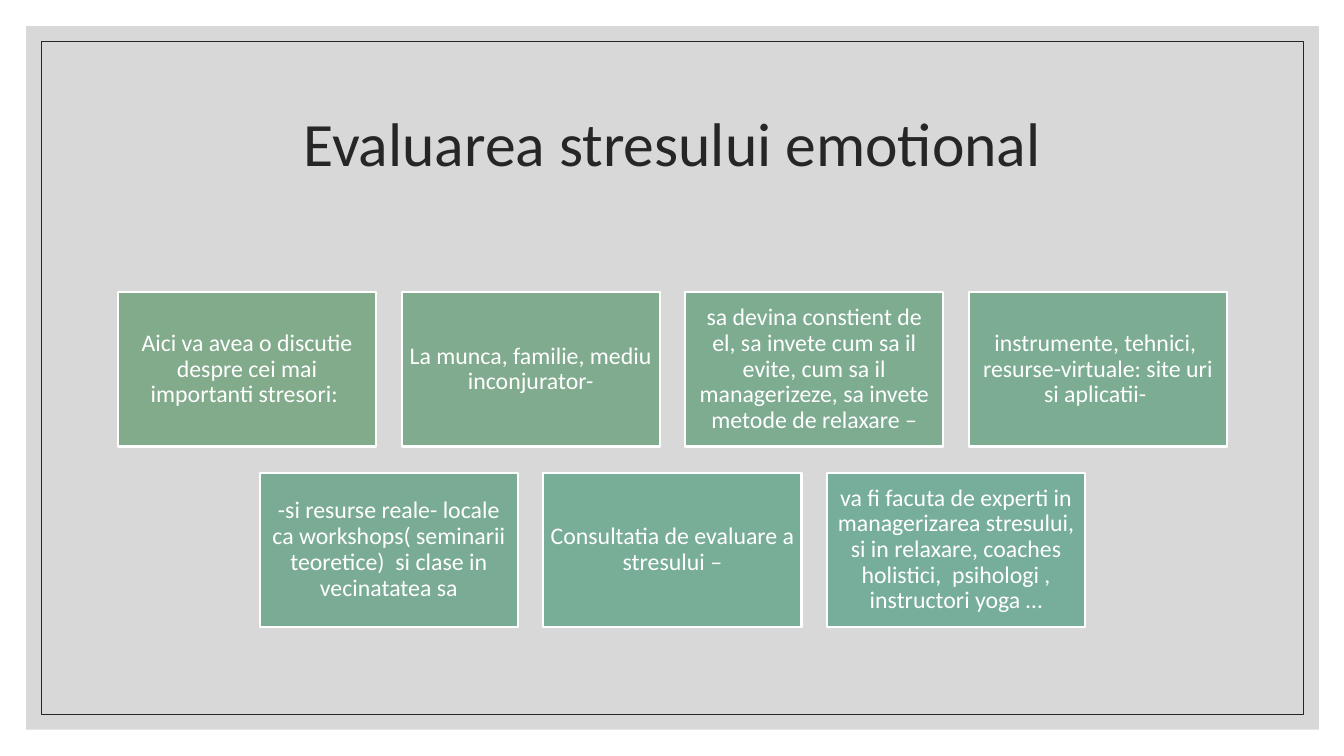
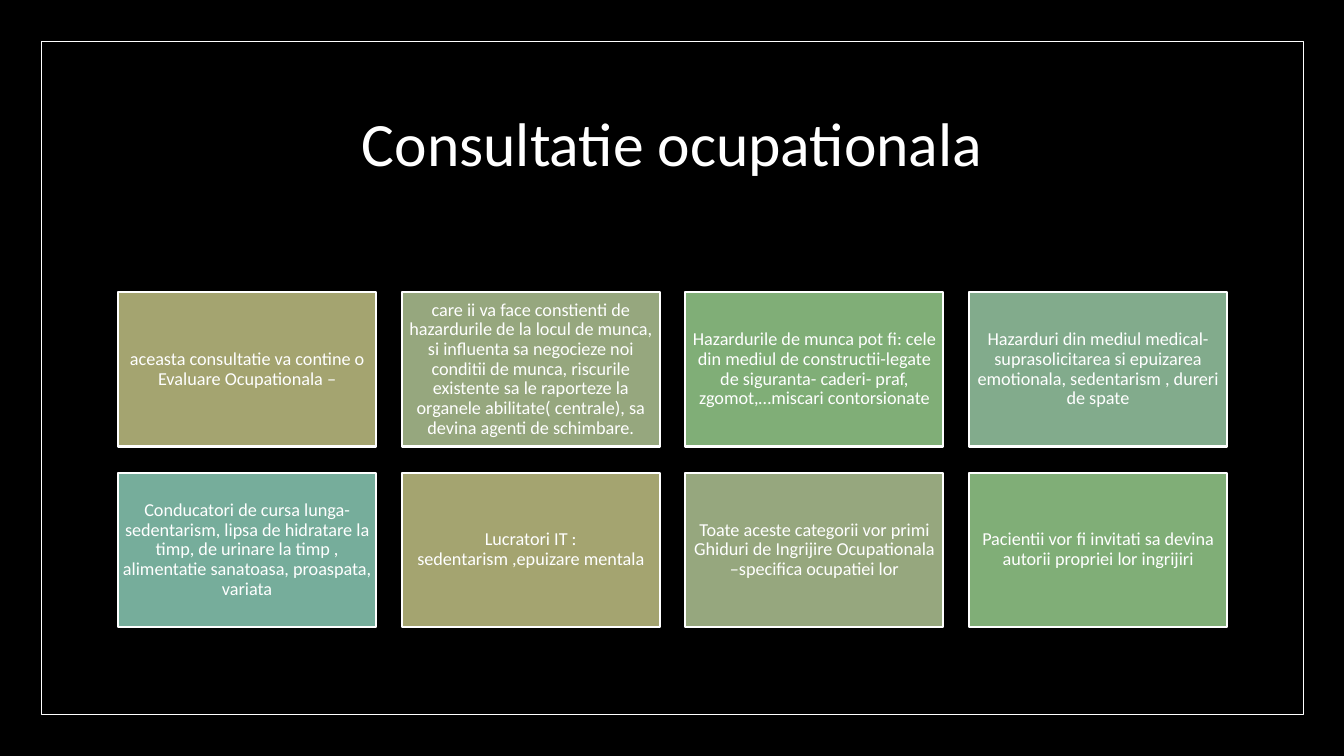
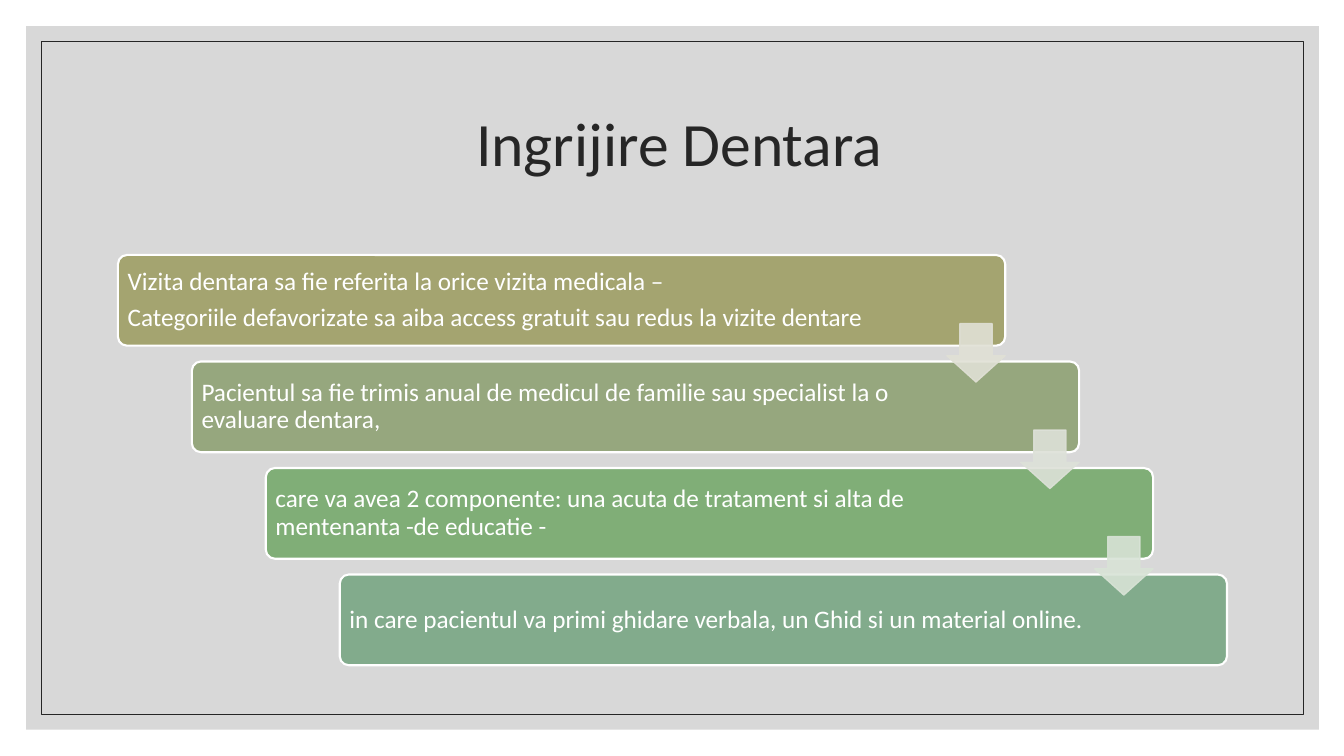
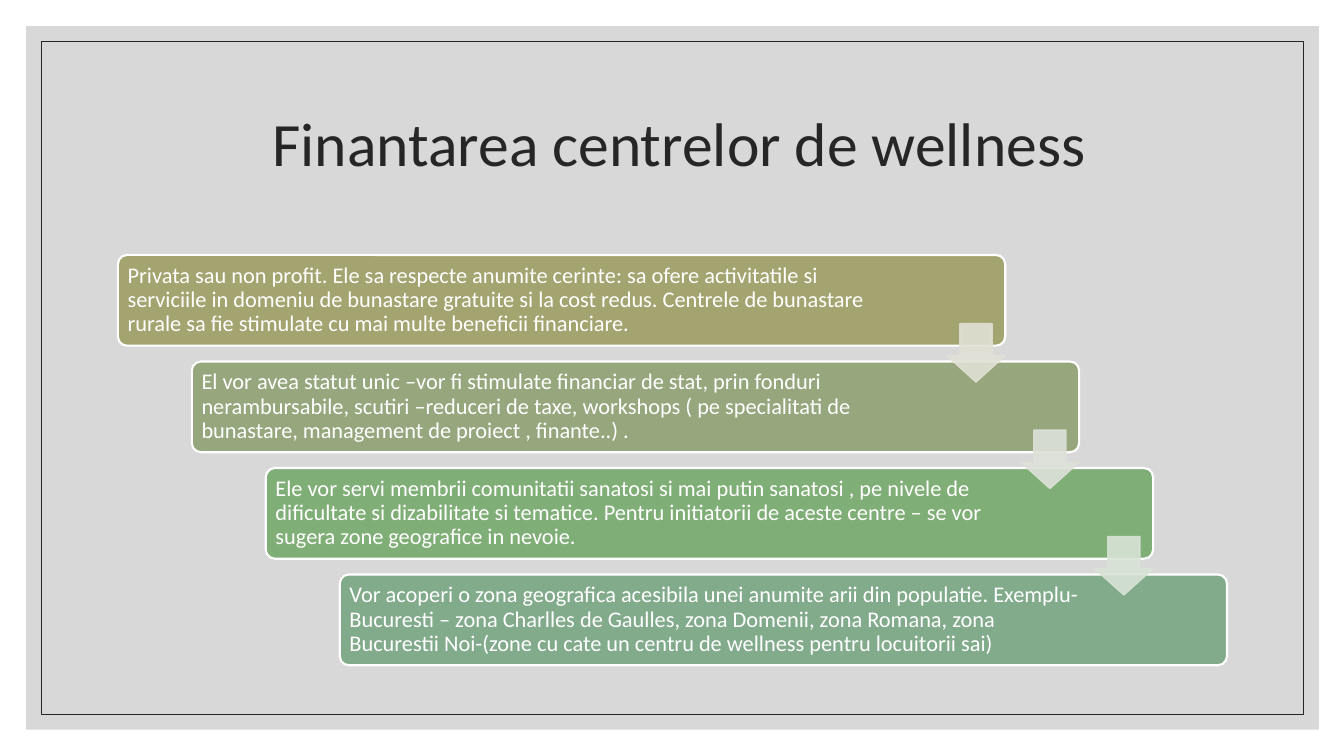
import pptx
import pptx.dml.color
import pptx.enum.shapes
import pptx.enum.text
import pptx.oxml.ns
import pptx.util
from lxml import etree

Inches = pptx.util.Inches
Pt = pptx.util.Pt
RGB = pptx.dml.color.RGBColor
Kind = pptx.enum.shapes.MSO_SHAPE
Align = pptx.enum.text.PP_ALIGN
Anchor = pptx.enum.text.MSO_ANCHOR

# Colours
WHITE = RGB(0xFF, 0xFF, 0xFF)
BLACK = RGB(0x00, 0x00, 0x00)
INK = RGB(0x26, 0x26, 0x26)
GREY = RGB(0xBF, 0xBF, 0xBF)
OLIVE = RGB(0xA4, 0xA4, 0x70)
SAGE = RGB(0x96, 0xA7, 0x7E)
GREEN = RGB(0x80, 0xAE, 0x77)
MOSS = RGB(0x82, 0xAB, 0x8C)
TEAL = RGB(0x76, 0xAD, 0x9B)
FADE = [MOSS, RGB(0x80, 0xAB, 0x8E), RGB(0x7E, 0xAC, 0x90),
        RGB(0x7C, 0xAC, 0x92), RGB(0x7A, 0xAC, 0x95),
        RGB(0x78, 0xAD, 0x98), TEAL]
CYCLE = [OLIVE, SAGE, GREEN, MOSS, TEAL]
PALE = [RGB(0xE0, 0xE0, 0xD5), RGB(0xDD, 0xE1, 0xD8), RGB(0xD8, 0xE3, 0xD6)]

# Layout, in inches
LEFT, SPAN = 1.17, 11
COLS, TILE_W, TILE_H = 4, 2.56, 1.53
TILE_TOP, ROW_STEP = 2.9, 1.79
COL_STEP = (SPAN - TILE_W) / (COLS - 1)
BAR_W, BAR_H, BAR_TOP, BAR_LAST = 8.8, 0.9, 2.53, 5.7
ARROW = 0.58


def put(item, values):
    for name, value in values.items():
        setattr(item, name, value)


def fade(paint, share):
    """Give solid fills an opacity in percent."""
    for color in paint.iter(pptx.oxml.ns.qn("a:srgbClr")):
        alpha = etree.SubElement(color, pptx.oxml.ns.qn("a:alpha"))
        alpha.set("val", str(share * 1000))


class Deck:
    font = "Calibri"

    def __init__(self):
        self.show = pptx.Presentation()
        put(self.show, {"slide_width": Inches(13.33),
                        "slide_height": Inches(7.5)})
        self.slide = None

    def start(self, title, dark=False):
        """Add a slide with its backdrop, frame and title."""
        self.slide = self.show.slides.add_slide(self.show.slide_layouts[6])
        back, panel, ink = (BLACK, BLACK, WHITE) if dark else (WHITE, GREY, INK)
        ground = self.slide.background.fill
        ground.solid()
        ground.fore_color.rgb = back
        self.shape(Kind.RECTANGLE, (0.26, 0.26, 12.82, 6.98), panel, share=60)
        self.shape(Kind.RECTANGLE, (0.41, 0.41, 12.52, 6.68), None, ink, 0.5)
        box = self.slide.shapes.add_textbox(
            *map(Inches, (LEFT, 0.7, SPAN, 1.5)))
        self.label(box, [title], 44, ink, Align.CENTER, (0.1, 0.05, 0.1, 0.05))

    def shape(self, kind, place, fill, line=None, width=1.5, share=100, adj=()):
        item = self.slide.shapes.add_shape(kind, *map(Inches, place))
        item.shadow.inherit = False
        for i, value in enumerate(adj):
            item.adjustments[i] = value
        if fill is None:
            item.fill.background()
        else:
            item.fill.solid()
            item.fill.fore_color.rgb = fill
        if line is None:
            item.line.fill.background()
        else:
            item.line.color.rgb = line
            item.line.width = Pt(width)
        if share < 100:
            fade(item._element.spPr, share)
        return item

    def label(self, item, lines, size, color, align, pads):
        frame = item.text_frame
        sides = ("margin_left", "margin_top", "margin_right", "margin_bottom")
        put(frame, {"word_wrap": True, "vertical_anchor": Anchor.MIDDLE,
                    **dict(zip(sides, map(Inches, pads)))})
        for i, line in enumerate(lines):
            para = frame.add_paragraph() if i else frame.paragraphs[0]
            para.text = line
            put(para, {"alignment": align, "line_spacing": 0.9})
            if i:
                para.space_before = Pt(6)
            for run in para.runs:
                put(run.font, {"name": self.font, "size": Pt(size)})
                run.font.color.rgb = color

    def tiles(self, texts, colors, size, pad):
        """Lay tiles in rows of four, each row centred."""
        for i, text in enumerate(texts):
            row, col = divmod(i, COLS)
            count = min(COLS, len(texts) - row * COLS)
            x = LEFT + (COLS - count) * COL_STEP / 2 + col * COL_STEP
            y = TILE_TOP + row * ROW_STEP
            tile = self.shape(Kind.RECTANGLE, (x, y, TILE_W, TILE_H),
                              colors[i % len(colors)], WHITE)
            self.label(tile, [text], size, WHITE, Align.CENTER, [pad] * 4)

    def stairs(self, steps, size):
        """Lay bars as stairs, then an arrow from each to the next."""
        gaps = len(steps) - 1
        across = (SPAN - BAR_W) / gaps
        down = (BAR_LAST - BAR_TOP) / gaps
        spots = [(LEFT + i * across, BAR_TOP + i * down)
                 for i in range(len(steps))]
        for i, ((x, y), lines) in enumerate(zip(spots, steps)):
            bar = self.shape(Kind.ROUNDED_RECTANGLE, (x, y, BAR_W, BAR_H),
                             CYCLE[i], WHITE, adj=[0.1])
            right = 1.39 if i else 1.06
            self.label(bar, lines, size, WHITE, Align.LEFT,
                       (0.07, 0.07, right, 0.07))
        for (x, y), color in zip(spots, PALE):
            self.shape(Kind.DOWN_ARROW,
                       (x + BAR_W - ARROW, y + 0.68, ARROW, ARROW),
                       color, color, 1, 90, [0.55, 0.45])


def main():
    deck = Deck()

    # Emotional stress
    deck.start(" Evaluarea stresului emotional ")
    deck.tiles([
        "Aici va avea o discutie despre cei mai importanti stresori: ",
        "La munca, familie, mediu inconjurator-",
        "sa devina constient de el, sa invete cum sa il evite, cum sa il "
        "managerizeze, sa invete metode de relaxare –",
        "instrumente, tehnici,  resurse-virtuale: site uri si aplicatii- ",
        "-si resurse reale- locale ca workshops( seminarii teoretice)  si "
        "clase in vecinatatea sa",
        "Consultatia de evaluare a stresului –",
        "va fi facuta de experti in managerizarea stresului, si in relaxare, "
        "coaches holistici,  psihologi , instructori yoga …",
    ], FADE, 17, 0.07)

    # Occupational consultation
    deck.start(" Consultatie ocupationala ", dark=True)
    deck.tiles([
        "aceasta consultatie va contine o Evaluare Ocupationala –",
        "care ii va face constienti de hazardurile de la locul de munca, si "
        "influenta sa negocieze noi conditii de munca, riscurile existente sa "
        "le raporteze la organele abilitate( centrale), sa devina agenti de "
        "schimbare.",
        "Hazardurile de munca pot fi: cele din mediul de constructii-legate "
        "de siguranta- caderi- praf, zgomot,…miscari contorsionate",
        "Hazarduri din mediul medical-suprasolicitarea si epuizarea "
        "emotionala, sedentarism , dureri de spate",
        "Conducatori de cursa lunga-sedentarism, lipsa de hidratare la timp, "
        "de urinare la timp , alimentatie sanatoasa, proaspata, variata",
        "Lucratori IT :\vsedentarism ,epuizare mentala",
        "Toate aceste categorii vor primi Ghiduri de Ingrijire Ocupationala "
        "–specifica ocupatiei lor",
        "Pacientii vor fi invitati sa devina autorii propriei lor ingrijiri",
    ], CYCLE, 13, 0.05)

    # Dental care
    deck.start(" Ingrijire Dentara")
    deck.stairs([
        ["Vizita dentara sa fie referita la orice vizita medicala –",
         "Categoriile defavorizate sa aiba access gratuit sau redus la vizite "
         "dentare"],
        ["Pacientul sa fie trimis anual de medicul de familie sau specialist "
         "la o evaluare dentara,"],
        ["care va avea 2 componente: una acuta de tratament si alta de "
         "mentenanta -de educatie -"],
        ["in care pacientul va primi ghidare verbala, un Ghid si un material "
         "online."],
    ], 18)

    # Funding
    deck.start(" Finantarea centrelor de wellness")
    deck.stairs([
        ["Privata sau non profit. Ele sa respecte anumite cerinte: sa ofere "
         "activitatile si serviciile in domeniu de bunastare gratuite si la "
         "cost redus. Centrele de bunastare rurale sa fie stimulate cu mai "
         "multe beneficii financiare."],
        ["El vor avea statut unic –vor fi stimulate financiar de stat, prin "
         "fonduri nerambursabile, scutiri –reduceri de taxe, workshops ( pe "
         "specialitati de bunastare, management de proiect , finante..) ."],
        ["Ele vor servi membrii comunitatii sanatosi si mai putin sanatosi , "
         "pe nivele de dificultate si dizabilitate si tematice. Pentru "
         "initiatorii de aceste centre – se vor sugera zone geografice in "
         "nevoie."],
        ["Vor acoperi o zona geografica acesibila unei anumite arii din "
         "populatie. Exemplu- Bucuresti – zona Charlles de Gaulles, zona "
         "Domenii, zona Romana, zona Bucurestii Noi-(zone cu cate un centru "
         "de wellness pentru locuitorii sai)"],
    ], 16)

    deck.show.save("out.pptx")


if __name__ == "__main__":
    main()
